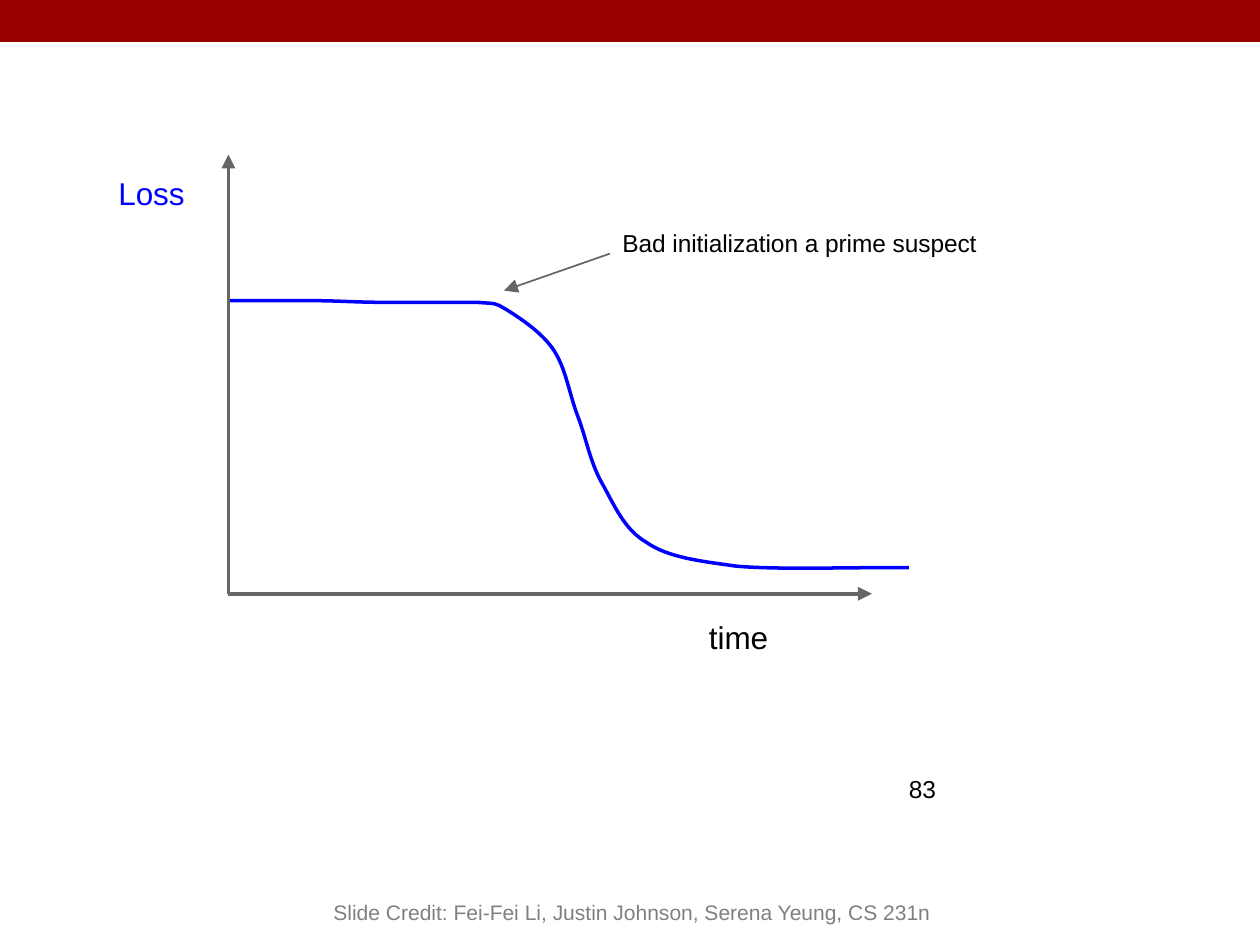
"""Build a slide with a loss curve that stays flat before it drops."""
from dataclasses import dataclass
from itertools import chain

from lxml.etree import SubElement
from pptx import Presentation
from pptx.dml.color import RGBColor
from pptx.enum.shapes import MSO_CONNECTOR as Connector, MSO_SHAPE as Preset
from pptx.enum.text import MSO_ANCHOR as Anchor, PP_ALIGN as Align
from pptx.oxml.ns import qn
from pptx.util import Inches, Pt


@dataclass(frozen=True)
class Theme:
    font: str = "Arial"
    band: str = "990000"
    axis: str = "666666"
    loss: str = "0000FF"
    ink: str = "000000"
    credit: str = "808080"
    label_size: float = 13.5
    note_size: float = 10.5
    credit_size: float = 9
    bold_line: float = 1.5
    thin_line: float = 0.75


THEME = Theme()
COLUMNS, ROWS = 750, 562.5
CELL = Inches(0.01)
BAND_ROWS = 25
NOTE_INSET, CREDIT_INSET = (7, 7), (10, 5)

LABELS = [
    ("83", (534, 453.5, 45, 32), THEME.note_size, THEME.ink, Anchor.MIDDLE, Align.LEFT, NOTE_INSET),
    ("Loss", (63.5, 96.5, 94, 32), THEME.label_size, THEME.loss, Anchor.TOP, Align.LEFT, NOTE_INSET),
    ("time", (415, 361, 94, 24), THEME.label_size, THEME.ink, Anchor.TOP, Align.LEFT, NOTE_INSET),
    ("Bad initialization a prime suspect", (363.5, 128.5, 230, 46),
     THEME.note_size, THEME.ink, Anchor.TOP, Align.LEFT, NOTE_INSET),
    ("Slide Credit: Fei-Fei Li, Justin Johnson, Serena Yeung, CS 231n", (80, 505.5, 592, 50),
     THEME.credit_size, THEME.credit, Anchor.BOTTOM, Align.CENTER, CREDIT_INSET),
]

ORIGIN = (136, 353.5)
ARROWS = [
    (ORIGIN, (ORIGIN[0], 92), THEME.bold_line),
    (ORIGIN, (519, ORIGIN[1]), THEME.bold_line),
    ((363, 151), (300, 173), THEME.thin_line),
]

LOSS_START = (137, 179)
LOSS_BENDS = [
    [(145, 179), (171, 179), (186, 179)],
    [(201, 179), (212, 180), (229, 180)],
    [(245, 180), (272, 180), (284, 180)],
    [(296, 181), (294, 180), (301, 184)],
    [(309, 189), (323, 198), (330, 209)],
    [(337, 220), (339, 235), (344, 248)],
    [(349, 261), (351, 274), (358, 287)],
    [(365, 299), (371, 315), (385, 323)],
    [(398, 332), (417, 334), (438, 337)],
    [(460, 339), (497, 338), (514, 338)],
    [(531, 338), (537, 338), (541, 338)],
]


def cells(*counts):
    return [round(count * CELL) for count in counts]


def style_line(line, color, width):
    line.color.rgb = RGBColor.from_string(color)
    line.width = Pt(width)


def add_band(slide):
    band = slide.shapes.add_shape(Preset.RECTANGLE, *cells(0, 0, COLUMNS, BAND_ROWS))
    band.shadow.inherit = False
    band.fill.solid()
    band.fill.fore_color.rgb = RGBColor.from_string(THEME.band)
    band.line.fill.background()


def add_arrow(slide, start, end, width):
    arrow = slide.shapes.add_connector(Connector.STRAIGHT, *cells(*start, *end))
    style_line(arrow.line, THEME.axis, width)
    SubElement(arrow.line._get_or_add_ln(), qn("a:tailEnd"), type="triangle")
    SubElement(arrow._element.spPr, qn("a:effectLst"))


def add_loss_curve(slide):
    builder = slide.shapes.build_freeform(*LOSS_START, scale=CELL)
    builder.add_line_segments(chain.from_iterable(LOSS_BENDS), close=False)
    curve = builder.convert_to_shape()
    curve.shadow.inherit = False
    curve.fill.background()
    style_line(curve.line, THEME.loss, THEME.bold_line)
    outline = next(curve._element.iter(qn("a:path")))
    steps = outline.findall(qn("a:lnTo"))
    for first in range(0, len(steps), 3):
        bend = SubElement(outline, qn("a:cubicBezTo"))
        for step in steps[first:first + 3]:
            bend.append(step[0])
            outline.remove(step)


def add_label(slide, words, box, size, color, anchor, align, inset):
    frame = slide.shapes.add_textbox(*cells(*box)).text_frame
    frame.word_wrap = True
    frame.vertical_anchor = anchor
    frame.margin_left = frame.margin_right = inset[0] * CELL
    frame.margin_top = frame.margin_bottom = inset[1] * CELL
    paragraph = frame.paragraphs[0]
    paragraph.alignment = align
    run = paragraph.add_run()
    run.text = words
    run.font.name = THEME.font
    run.font.size = Pt(size)
    run.font.color.rgb = RGBColor.from_string(color)


def main():
    deck = Presentation()
    deck.slide_width, deck.slide_height = cells(COLUMNS, ROWS)
    slide = deck.slides.add_slide(deck.slide_layouts[6])
    add_band(slide)
    for arrow in ARROWS:
        add_arrow(slide, *arrow)
    add_loss_curve(slide)
    for label in LABELS:
        add_label(slide, *label)
    deck.save("out.pptx")


if __name__ == "__main__":
    main()
